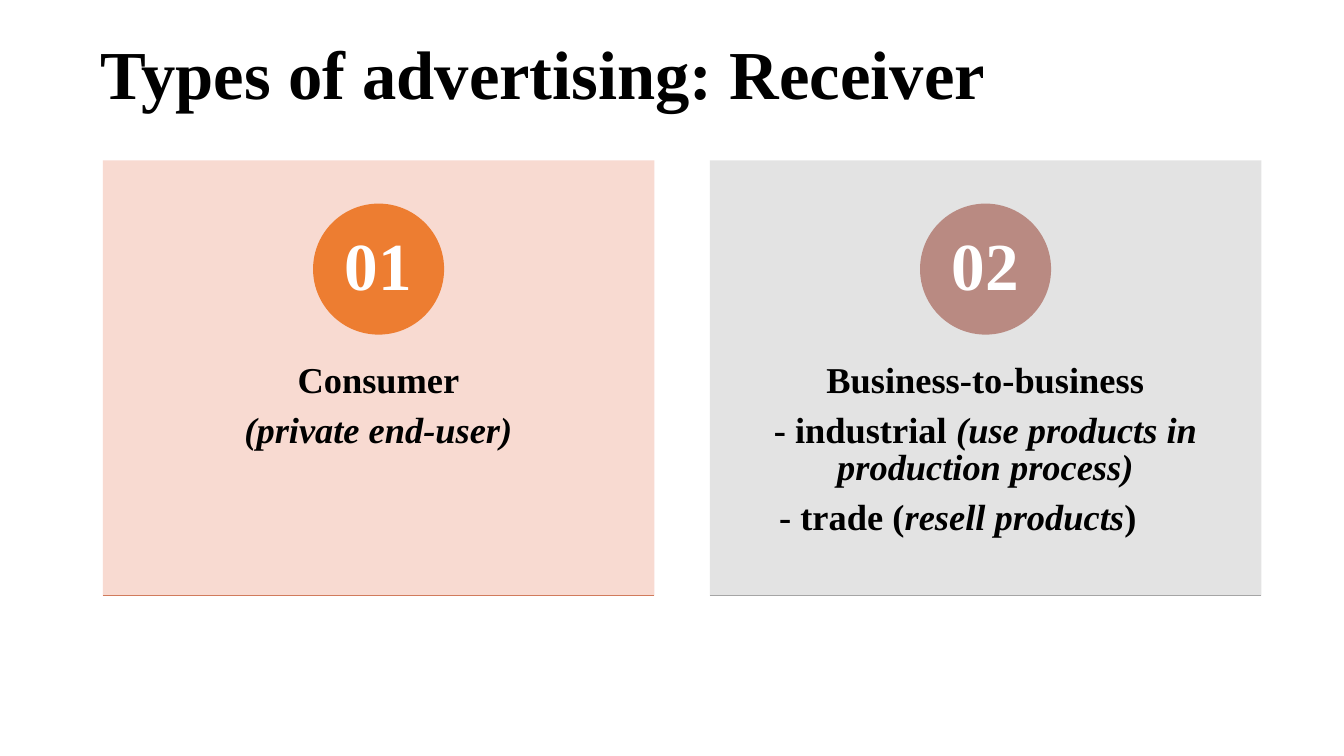
from dataclasses import dataclass

from lxml.etree import SubElement
from pptx import Presentation
from pptx.dml.color import RGBColor
from pptx.enum.shapes import MSO_CONNECTOR as Connector, MSO_SHAPE as Preset
from pptx.enum.text import MSO_ANCHOR as Anchor, PP_ALIGN as Align
from pptx.oxml.ns import qn
from pptx.slide import Slide
from pptx.text.text import TextFrame
from pptx.util import Inches, Pt


@dataclass(frozen=True)
class Theme:
    font: str = "Times New Roman"
    ink: str = "000000"
    number_ink: str = "FFFFFF"
    title_size: float = 49
    number_size: float = 48
    body_size: float = 26
    rule_width: float = 0.75
    card_opacity: int = 90


@dataclass(frozen=True)
class Line:
    """Runs alternate between upright and italic, starting upright."""
    runs: tuple[str, ...]
    before: float
    spacing: float | None = None
    margin: float = 0


@dataclass(frozen=True)
class Card:
    number: str
    fill: str
    badge: str
    rule: str
    text_height: float
    lines: tuple[Line, ...]


THEME = Theme()
SLIDE_WIDTH, SLIDE_HEIGHT = 13.33, 7.5

# Card grid, in inches
CARD_LEFT, CARD_TOP = 1.02, 1.59
CARD_WIDTH, CARD_HEIGHT = 5.47, 4.32
CARD_STEP = 6.02
BADGE_TOP, BADGE_SIZE = 2.02, 1.3
TEXT_TOP = 2.21

CARDS = (
    Card("01", "F8D7CD", "ED7D31", "D17B5C", 2.28, (
        Line(("Consumer",), 37.6),
        Line(("", "(private end-user)"), 4.8),
    )),
    Card("02", "E1E1E1", "B98A82", "A5A5A5", 3.15, (
        Line(("Business-to-business",), 37.6),
        Line(("- industrial ", "(use products in production process)"), 9.8, 26.2, 0.55),
        Line(("- trade (", "resell products", ")"), 4.8),
    )),
)


def color(value: str) -> RGBColor:
    return RGBColor.from_string(value)


def prepare_frame(frame: TextFrame, anchor: Anchor) -> None:
    frame.word_wrap = True
    frame.vertical_anchor = anchor
    frame.margin_left = frame.margin_right = frame.margin_bottom = 0
    frame.margin_top = Inches(0.01)


def format_paragraph(paragraph, size: float, ink: str, align: Align, before: float) -> None:
    paragraph.alignment = align
    paragraph.space_before = Pt(before)
    font = paragraph.font
    font.name, font.size, font.bold = THEME.font, Pt(size), True
    font.color.rgb = color(ink)


def add_title(slide: Slide, text: str) -> None:
    title = slide.shapes.title
    title.left, title.top = Inches(1), Inches(0.28)
    title.width, title.height = Inches(8.81), Inches(0.84)
    frame = title.text_frame
    prepare_frame(frame, Anchor.BOTTOM)
    frame.text = text
    format_paragraph(frame.paragraphs[0], THEME.title_size, THEME.ink, Align.LEFT, 1)


def add_block(slide: Slide, preset: Preset, left: float, top: float,
              width: float, height: float, fill: str, opacity: int = 100) -> None:
    shape = slide.shapes.add_shape(
        preset, Inches(left), Inches(top), Inches(width), Inches(height))
    shape.shadow.inherit = False
    shape.fill.solid()
    shape.fill.fore_color.rgb = color(fill)
    shape.line.fill.background()
    if opacity < 100:
        tint = shape.fill._xPr.find(f".//{qn('a:srgbClr')}")
        SubElement(tint, qn("a:alpha"), val=str(opacity * 1000))


def add_rule(slide: Slide, left: float, top: float, width: float, ink: str) -> None:
    rule = slide.shapes.add_connector(
        Connector.STRAIGHT, Inches(left), Inches(top), Inches(left + width), Inches(top))
    rule.line.color.rgb = color(ink)
    rule.line.width = Pt(THEME.rule_width)
    SubElement(rule._element.spPr, qn("a:effectLst"))


def add_card_text(slide: Slide, card: Card, left: float) -> None:
    box = slide.shapes.add_textbox(
        Inches(left), Inches(TEXT_TOP), Inches(CARD_WIDTH), Inches(card.text_height))
    frame = box.text_frame
    prepare_frame(frame, Anchor.TOP)
    frame.text = card.number
    format_paragraph(frame.paragraphs[0], THEME.number_size, THEME.number_ink, Align.CENTER, 1)
    for line in card.lines:
        paragraph = frame.add_paragraph()
        format_paragraph(paragraph, THEME.body_size, THEME.ink, Align.CENTER, line.before)
        if line.spacing:
            paragraph.line_spacing = Pt(line.spacing)
        if line.margin:
            properties = paragraph._p.get_or_add_pPr()
            for side in ("marL", "marR"):
                properties.set(side, str(Inches(line.margin)))
        for index, text in enumerate(line.runs):
            if text:
                run = paragraph.add_run()
                run.text = text
                run.font.italic = index % 2 == 1


def add_card(slide: Slide, card: Card, left: float) -> None:
    add_block(slide, Preset.RECTANGLE, left, CARD_TOP, CARD_WIDTH, CARD_HEIGHT,
              card.fill, THEME.card_opacity)
    badge_left = left + (CARD_WIDTH - BADGE_SIZE) / 2
    add_block(slide, Preset.OVAL, badge_left, BADGE_TOP, BADGE_SIZE, BADGE_SIZE, card.badge)
    add_card_text(slide, card, left)
    add_rule(slide, left, CARD_TOP + CARD_HEIGHT, CARD_WIDTH, card.rule)


def main() -> None:
    presentation = Presentation()
    presentation.slide_width = Inches(SLIDE_WIDTH)
    presentation.slide_height = Inches(SLIDE_HEIGHT)
    title_only = presentation.slide_layouts[5]
    slide = presentation.slides.add_slide(title_only)

    # Heading
    add_title(slide, "Types of advertising: Receiver")

    # One card per kind of receiver
    for column, card in enumerate(CARDS):
        add_card(slide, card, CARD_LEFT + column * CARD_STEP)

    presentation.save("out.pptx")


if __name__ == "__main__":
    main()
